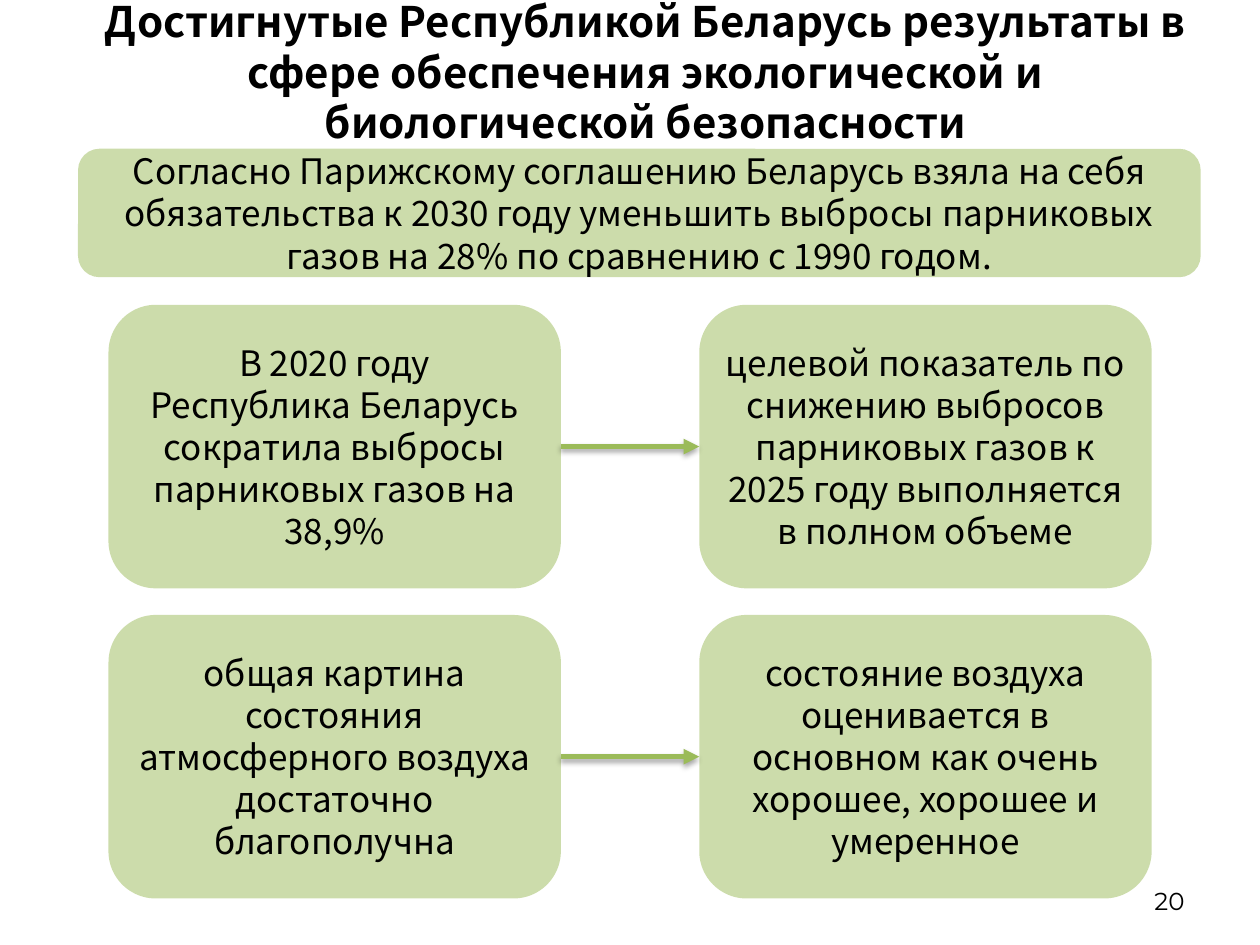
"""Build a slide on Belarus's results in environmental and biological safety."""
from lxml.etree import SubElement
from pptx import Presentation
from pptx.dml.color import RGBColor
from pptx.enum.shapes import MSO_CONNECTOR, MSO_SHAPE
from pptx.enum.text import MSO_ANCHOR, MSO_AUTO_SIZE, PP_ALIGN
from pptx.oxml.ns import qn
from pptx.util import Pt

COLORS = {"text": "000000", "green": "9BBB59", "shadow": "000000"}
BODY_FONT = "Noto Sans CJK JP"
BANNER = (
    "Согласно Парижскому соглашению Беларусь взяла на себя обязательства "
    "к 2030 году уменьшить выбросы парниковых газов на 28% по сравнению с 1990 годом."
)
ROWS = [
    ("В 2020 году Республика Беларусь сократила выбросы парниковых газов на 38,9%",
     "целевой показатель по снижению выбросов парниковых газов к 2025 году "
     "выполняется в полном объеме"),
    ("общая картина состояния атмосферного воздуха достаточно благополучна",
     "состояние воздуха оценивается в основном как очень хорошее, хорошее и умеренное"),
]
CARD_LEFTS = (62, 399.6)
CARD_WIDTH, CARD_HEIGHT = 258.5, 162
FIRST_TOP, ROW_PITCH = 174.2, 177.2


class SlideBuilder:
    """Hold the style and the current slide, and add elements to it."""

    def __init__(self, slide):
        self.slide = slide

    def color(self, name):
        return RGBColor.from_string(COLORS[name])

    def set_text(self, shape, text, size, font=BODY_FONT, bold=False,
                 alignment=PP_ALIGN.CENTER, line_spacing=None):
        frame = shape.text_frame
        frame_format = {
            "word_wrap": True,
            "auto_size": MSO_AUTO_SIZE.NONE,
            "vertical_anchor": MSO_ANCHOR.MIDDLE,
        }
        for name, value in frame_format.items():
            setattr(frame, name, value)
        paragraph = frame.paragraphs[0]
        paragraph.text = text
        paragraph.alignment = alignment
        if line_spacing:
            paragraph.line_spacing = Pt(line_spacing)
        font_format = {"name": font, "size": Pt(size), "bold": bold}
        for name, value in font_format.items():
            setattr(paragraph.runs[0].font, name, value)
        paragraph.runs[0].font.color.rgb = self.color("text")

    def title(self, text, left, top, width, height):
        shape = self.slide.shapes.title
        position = {"left": left, "top": top, "width": width, "height": height}
        for name, value in position.items():
            setattr(shape, name, Pt(value))
        self.set_text(shape, text, 24, bold=True, line_spacing=28.8)

    def card(self, text, left, top, width, height):
        shape = self.slide.shapes.add_shape(
            MSO_SHAPE.ROUNDED_RECTANGLE, Pt(left), Pt(top), Pt(width), Pt(height))
        shape.shadow.inherit = False
        shape.fill.solid()
        shape.fill.fore_color.rgb = self.color("green")
        fill_color = shape._element.spPr.find(".//" + qn("a:srgbClr"))
        SubElement(fill_color, qn("a:alpha"), val="50000")
        shape.line.fill.background()
        self.set_text(shape, text, 20, line_spacing=24)
        return shape

    def arrow(self, source, target):
        connector = self.slide.shapes.add_connector(MSO_CONNECTOR.STRAIGHT, 0, 0, 0, 0)
        connector.begin_connect(source, 3)
        connector.end_connect(target, 1)
        connector.line.color.rgb = self.color("green")
        connector.line.width = Pt(3)
        properties = connector._element.spPr
        SubElement(properties.find(qn("a:ln")), qn("a:tailEnd"), type="triangle")
        effects = SubElement(properties, qn("a:effectLst"))
        shadow = SubElement(
            effects, qn("a:outerShdw"), blurRad=str(Pt(3.1)), dist=str(Pt(1.8)),
            dir="5400000", rotWithShape="0")
        shadow_color = SubElement(shadow, qn("a:srgbClr"), val=COLORS["shadow"])
        SubElement(shadow_color, qn("a:alpha"), val="35000")

    def page_number(self, text, left, top, width, height):
        shape = self.slide.shapes.add_textbox(Pt(left), Pt(top), Pt(width), Pt(height))
        self.set_text(shape, text, 14, font="Montserrat", alignment=PP_ALIGN.RIGHT)


def main():
    presentation = Presentation()
    presentation.slide_width, presentation.slide_height = Pt(720), Pt(540)
    builder = SlideBuilder(presentation.slides.add_slide(presentation.slide_layouts[5]))
    builder.page_number("20", 516.2, 500.4, 167.8, 28.8)
    builder.title(
        "Достигнутые Республикой Беларусь результаты в сфере обеспечения "
        "экологической и биологической безопасности", 44.6, -0.7, 648, 82.8)
    builder.card(BANNER, 44.6, 85, 641.5, 73.4)
    for index, texts in enumerate(ROWS):
        top = FIRST_TOP + index * ROW_PITCH
        source, target = [
            builder.card(text, left, top, CARD_WIDTH, CARD_HEIGHT)
            for text, left in zip(texts, CARD_LEFTS)
        ]
        builder.arrow(source, target)
    presentation.save("out.pptx")


if __name__ == "__main__":
    main()
